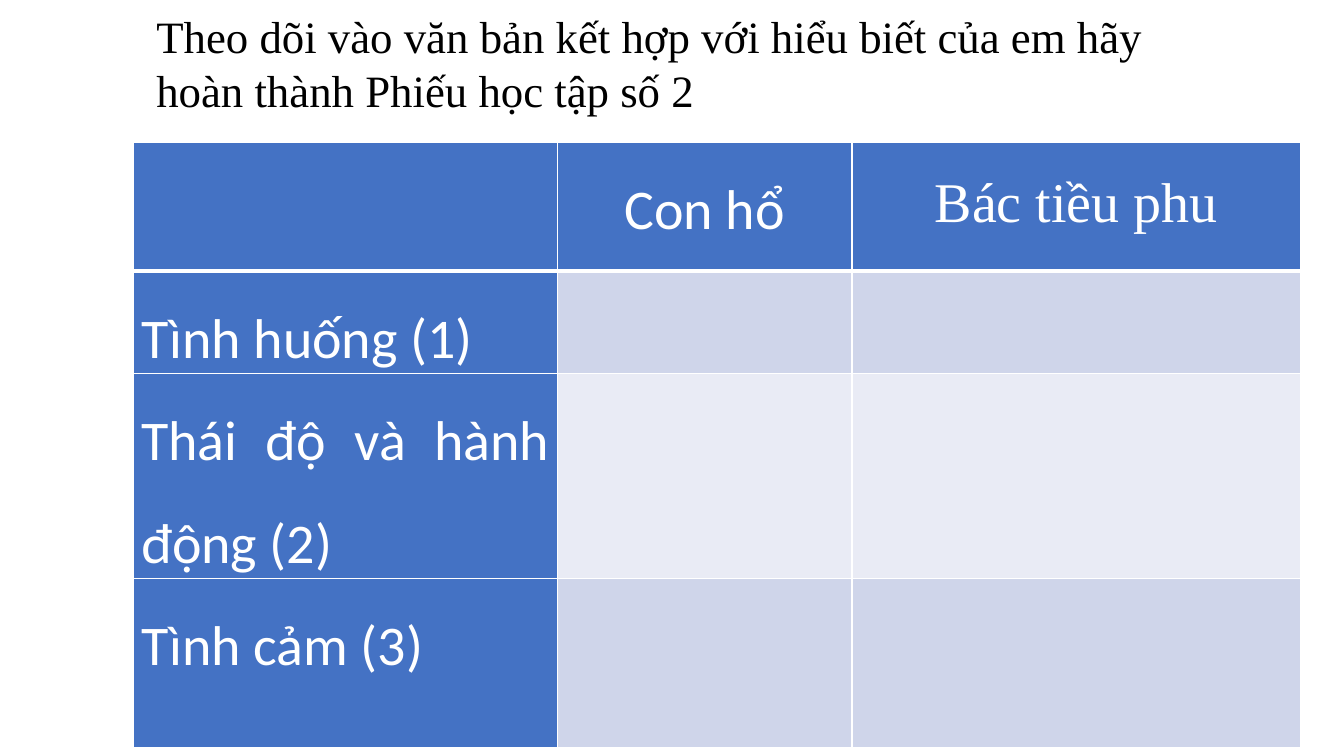
from lxml.etree import SubElement
from pptx import Presentation
from pptx.dml.color import RGBColor
from pptx.enum.text import MSO_ANCHOR, MSO_AUTO_SIZE, PP_ALIGN
from pptx.oxml.ns import qn
from pptx.util import Inches, Pt

INSTRUCTION = "Theo dõi vào văn bản kết hợp với hiểu biết của em hãy hoàn thành Phiếu học tập số 2"
WORKSHEET = [
    ["", "Con hổ", "Bác tiều phu"],
    ["Tình huống (1)", "", ""],
    ["Thái độ và hành động (2)", "", ""],
    ["Tình cảm (3)", "", ""],
]
COLUMN_WIDTHS = [4.21, 2.92, 4.45]
ROW_HEIGHTS = [1.28, 0.87, 1.68, 1.68]
COLORS = {"text": "000000", "header": "4472C4", "odd": "CFD5EA",
          "even": "E9EBF5", "white": "FFFFFF"}
SERIF, SANS = "Times New Roman", "Calibri"
CELL_FORMAT = {"margin_left": Inches(0.08), "margin_right": Inches(0.08),
               "margin_top": 0, "margin_bottom": 0}


def write(paragraph, words, font, size, color):
    run = paragraph.add_run()
    run.text = words
    run.font.name = font
    run.font.size = Pt(size)
    run.font.color.rgb = RGBColor.from_string(COLORS[color])


def add_borders(cell, bottom_width):
    properties = cell._tc.get_or_add_tcPr()
    for side, width in {"L": 1, "R": 1, "T": 1, "B": bottom_width}.items():
        line = SubElement(properties, qn(f"a:ln{side}"), w=str(Pt(width)))
        fill = SubElement(line, qn("a:solidFill"))
        SubElement(fill, qn("a:srgbClr"), val=COLORS["white"])


def add_instruction(slide):
    title = slide.shapes.title
    title.left, title.top = Inches(1.45), Inches(0.03)
    title.width, title.height = Inches(10.4), Inches(1.18)
    frame = title.text_frame
    frame_format = {"word_wrap": True, "auto_size": MSO_AUTO_SIZE.NONE,
                    "vertical_anchor": MSO_ANCHOR.MIDDLE}
    for name, value in frame_format.items():
        setattr(frame, name, value)
    frame.paragraphs[0].alignment = PP_ALIGN.LEFT
    write(frame.paragraphs[0], INSTRUCTION, SERIF, 32, "text")


def add_worksheet(slide):
    table = slide.shapes.add_table(
        len(WORKSHEET), len(COLUMN_WIDTHS), Inches(1.32), Inches(1.41),
        Inches(sum(COLUMN_WIDTHS)), Inches(sum(ROW_HEIGHTS))).table
    for column, width in zip(table.columns, COLUMN_WIDTHS):
        column.width = Inches(width)
    for row, height in zip(table.rows, ROW_HEIGHTS):
        row.height = Inches(height)

    for r, labels in enumerate(WORKSHEET):
        for c, label in enumerate(labels):
            cell = table.cell(r, c)
            add_borders(cell, 3 if r == 0 else 1)
            is_header = r == 0 or c == 0
            fill = "header" if is_header else "odd" if r % 2 else "even"
            cell.fill.solid()
            cell.fill.fore_color.rgb = RGBColor.from_string(COLORS[fill])
            if not label:
                continue
            for name, value in CELL_FORMAT.items():
                setattr(cell, name, value)
            paragraph = cell.text_frame.paragraphs[0]
            paragraph.alignment = PP_ALIGN.CENTER if r == 0 else PP_ALIGN.JUSTIFY
            paragraph.line_spacing = 1.5
            write(paragraph, label, SERIF if c == 2 else SANS, 40, "white")
            paragraph.runs[0].font.bold = False


def main():
    deck = Presentation()
    deck.slide_width, deck.slide_height = Inches(13.33), Inches(7.5)
    slide = deck.slides.add_slide(deck.slide_layouts[5])
    add_instruction(slide)
    add_worksheet(slide)
    deck.save("out.pptx")


if __name__ == "__main__":
    main()
